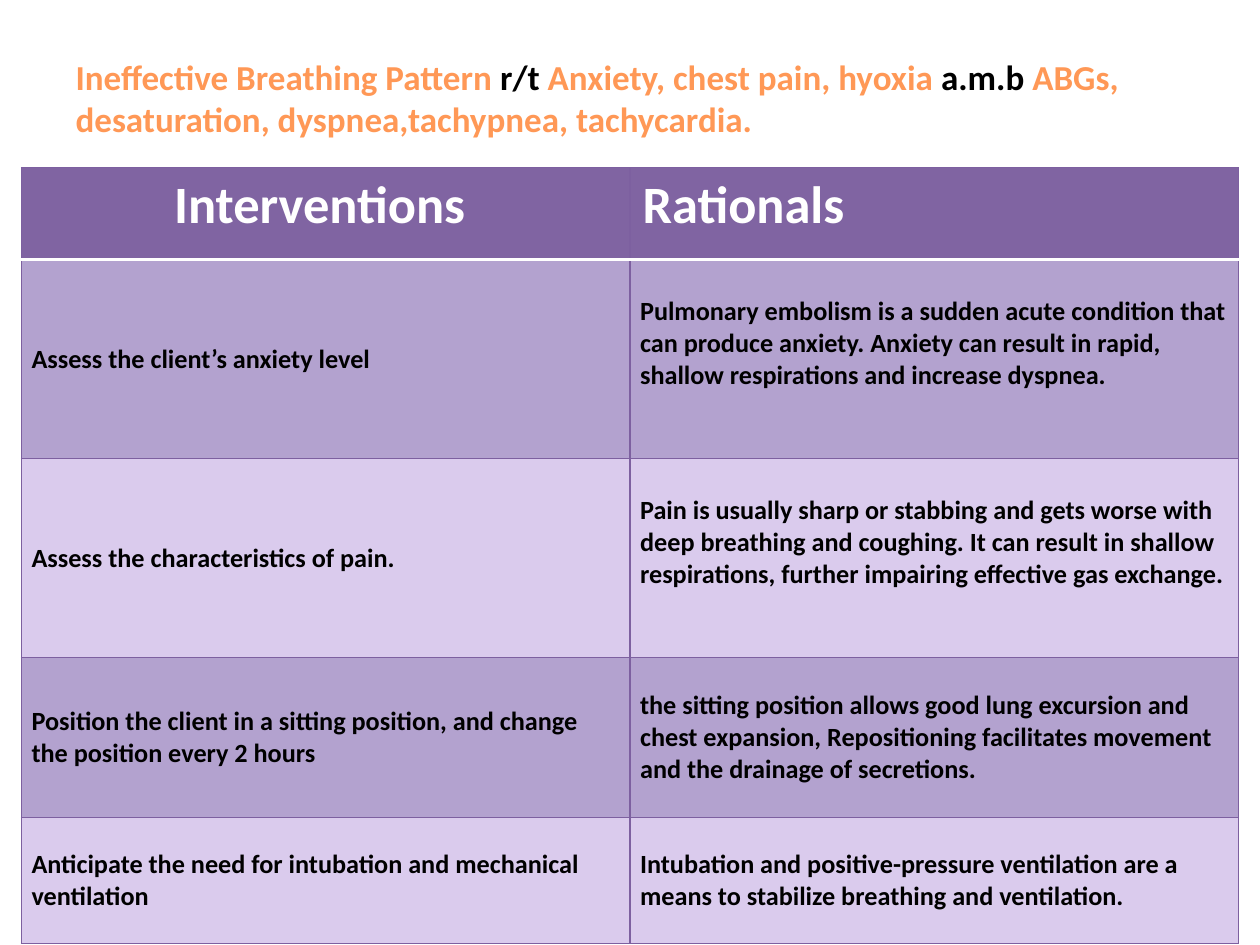
"""Build a nursing care plan slide with a table of interventions and rationales."""
from lxml.etree import SubElement
from pptx import Presentation
from pptx.dml.color import RGBColor
from pptx.enum.text import MSO_ANCHOR, PP_ALIGN
from pptx.oxml.ns import qn
from pptx.util import Inches, Pt

FONT = "Calibri"
ORANGE = RGBColor(0xFF, 0x98, 0x56)
BLACK = RGBColor(0x00, 0x00, 0x00)
WHITE = RGBColor(0xFF, 0xFF, 0xFF)
PURPLE = RGBColor(0x80, 0x64, 0xA2)
BORDER = RGBColor(0x7D, 0x60, 0xA0)
BANDS = (RGBColor(0xB3, 0xA2, 0xCF), RGBColor(0xDA, 0xCB, 0xED))

DIAGNOSIS = (
    ("Ineffective Breathing Pattern ", ORANGE),
    ("r/t", BLACK),
    (" Anxiety, chest pain, hyoxia ", ORANGE),
    ("a.m.b ", BLACK),
    ("ABGs, desaturation, dyspnea,tachypnea, tachycardia.", ORANGE),
)
HEADINGS = (("Interventions ", PP_ALIGN.CENTER), ("Rationals", PP_ALIGN.LEFT))
HEADING_HEIGHT = 0.73
COLUMN_WIDTH = 4.83
RAISED = 0.27
LEVEL = 0.02
CARE_PLAN = (
    (1.58, RAISED, "Assess the client’s anxiety level",
     "Pulmonary embolism is a sudden acute condition that can produce anxiety. "
     "Anxiety can result in rapid, shallow respirations and increase dyspnea."),
    (1.58, RAISED, "Assess the characteristics of pain.",
     "Pain is usually sharp or stabbing and gets worse with deep breathing and coughing. "
     "It can result in shallow respirations, further impairing effective gas exchange."),
    (1.27, LEVEL, "Position the client in a sitting position, and change the position every 2 hours",
     "the sitting position allows good lung excursion and chest expansion, "
     "Repositioning facilitates movement and the drainage of secretions."),
    (1, LEVEL, "Anticipate the need for intubation and mechanical ventilation",
     "Intubation and positive-pressure ventilation are a means to stabilize "
     "breathing and ventilation."),
)


def set_font(paragraph, size, color=None):
    """Give a paragraph the bold slide font."""
    font = paragraph.font
    font.name, font.size, font.bold = FONT, Pt(size), True
    if color is not None:
        font.color.rgb = color


def add_diagnosis(slide):
    """Place the nursing diagnosis in the title."""
    title = slide.shapes.title
    title.left, title.top = Inches(0.5), Inches(0.3)
    title.width, title.height = Inches(9), Inches(1.25)
    frame = title.text_frame
    frame.vertical_anchor = MSO_ANCHOR.MIDDLE
    frame.margin_bottom = Inches(0.35)
    paragraph = frame.paragraphs[0]
    paragraph.alignment = PP_ALIGN.LEFT
    set_font(paragraph, 20)
    for words, color in DIAGNOSIS:
        run = paragraph.add_run()
        run.text = words
        run.font.color.rgb = color


def set_borders(cell, bottom=(BORDER, 0.75)):
    """Outline a cell, with its own bottom edge if given."""
    properties = cell._tc.get_or_add_tcPr()
    edges = {"a:lnL": (BORDER, 0.75), "a:lnR": (BORDER, 0.75),
             "a:lnT": (BORDER, 0.75), "a:lnB": bottom}
    for position, (tag, (color, width)) in enumerate(edges.items()):
        line = SubElement(properties, qn(tag), w=str(Pt(width)))
        properties.insert(position, line)
        fill = SubElement(line, qn("a:solidFill"))
        SubElement(fill, qn("a:srgbClr"), val=str(color))


def fill_cell(cell, words, color, size, text_color):
    """Write one cell and return its paragraph."""
    cell.text = words
    cell.fill.solid()
    cell.fill.fore_color.rgb = color
    paragraph = cell.text_frame.paragraphs[0]
    set_font(paragraph, size, text_color)
    return paragraph


def add_heading_row(table):
    """Fill the heading row above its white rule."""
    table.rows[0].height = Inches(HEADING_HEIGHT)
    for cell, (words, alignment) in zip(table.rows[0].cells, HEADINGS):
        fill_cell(cell, words, PURPLE, 30, WHITE).alignment = alignment
        set_borders(cell, bottom=(WHITE, 2))


def add_plan_row(table, index, height, bottom_margin, intervention, rationale):
    """Fill one banded row with an intervention and its rationale."""
    row = table.rows[index]
    row.height = Inches(height)
    margins = (LEVEL, bottom_margin)
    for cell, words, margin in zip(row.cells, (intervention, rationale), margins):
        fill_cell(cell, words, BANDS[(index - 1) % 2], 15, BLACK)
        cell.vertical_anchor = MSO_ANCHOR.MIDDLE
        cell.margin_left = cell.margin_right = Inches(0.08)
        cell.margin_top, cell.margin_bottom = Inches(LEVEL), Inches(margin)
        set_borders(cell)
        if index == 1:
            rule = cell._tc.tcPr.find(qn("a:lnT"))
            rule.set("w", str(Pt(2)))
            rule.find(".//" + qn("a:srgbClr")).set("val", str(WHITE))


def add_care_plan(slide):
    """Add the table of interventions and rationales."""
    height = HEADING_HEIGHT + sum(row[0] for row in CARE_PLAN)
    table = slide.shapes.add_table(
        len(CARE_PLAN) + 1, len(HEADINGS), Inches(0.17), Inches(1.33),
        Inches(COLUMN_WIDTH * len(HEADINGS)), Inches(height)).table
    for column in table.columns:
        column.width = Inches(COLUMN_WIDTH)
    add_heading_row(table)
    for index, row in enumerate(CARE_PLAN, start=1):
        add_plan_row(table, index, *row)


def main():
    """Build and save the slide."""
    presentation = Presentation()
    presentation.slide_width, presentation.slide_height = Inches(10), Inches(7.5)
    slide = presentation.slides.add_slide(presentation.slide_layouts.get_by_name("Title Only"))
    add_diagnosis(slide)
    add_care_plan(slide)
    presentation.save("out.pptx")


if __name__ == "__main__":
    main()
